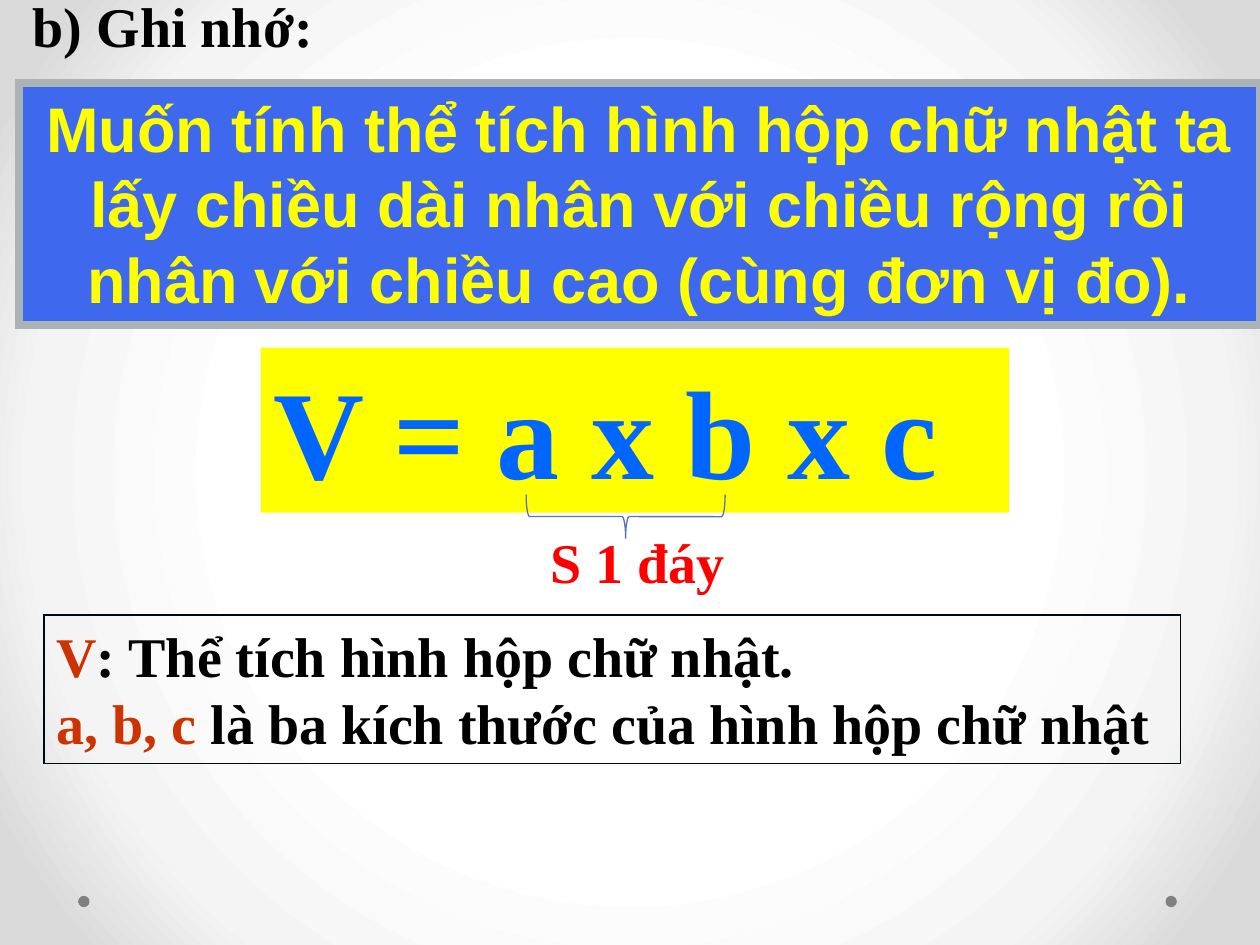
from pptx import Presentation, oxml, util as u
from pptx.dml.color import RGBColor
from pptx.enum import shapes, text
from pptx.oxml.ns import nsdecls

SERIF, SANS = "Times New Roman", "Arial"
BLACK, RED, RUST = "000000", "FF0000", "CC3300"

# Content: paragraphs are lists of (wording, colour) spans
TITLE = [[("b) Ghi nhớ:", BLACK)]]
FORMULA = [[("V = a x b x c", "0066FF")]]
RULE = [[("Muốn tính thể tích hình hộp chữ nhật ta lấy chiều dài nhân với "
          "chiều rộng rồi nhân với chiều cao (cùng đơn vị đo).", "FFFF00")]]
BASE_AREA = [[("S 1 đáy", RED)]]
LEGEND = [
    [("V", RUST), (": Thể tích hình hộp chữ nhật.", BLACK)],
    [("a, b, c", RUST), (" là ba kích thước của hình hộp chữ nhật", BLACK)],
]
GRADIENT = [(50, "FFFFFF"), (76, "F4F4F4"), (92, "DADADA")]
DOT_LEFTS = [9.25, 0.62]


def rgb(value):
    return RGBColor.from_string(value)


def place(box, left, top, width, height):
    box.left, box.top, box.width, box.height = map(u.Inches, (left, top, width, height))


def write(box, paragraphs, size, font=SERIF, align=text.PP_ALIGN.LEFT, before=0):
    frame = box.text_frame
    frame.word_wrap = True
    frame.auto_size = text.MSO_AUTO_SIZE.SHAPE_TO_FIT_TEXT
    frame.vertical_anchor = text.MSO_ANCHOR.TOP
    for index, spans in enumerate(paragraphs):
        para = frame.add_paragraph() if index else frame.paragraphs[0]
        para.alignment = align
        para.space_before = u.Pt(before)
        for wording, color in spans:
            span = para.add_run()
            span.text = wording
            span.font.name, span.font.size, span.font.bold = font, u.Pt(size), True
            span.font.color.rgb = rgb(color)


def add_shape(page, kind, at, fill=None, line=None, weight=0.75):
    shape = page.shapes.add_shape(kind, *map(u.Inches, at))
    shape.shadow.inherit = False
    if fill:
        shape.fill.solid()
        shape.fill.fore_color.rgb = rgb(fill)
    else:
        shape.fill.background()
    if line:
        shape.line.color.rgb = rgb(line)
        shape.line.width = u.Pt(weight)
        # Square corners
        shape.element.spPr.ln.append(
            oxml.parse_xml(f'<a:miter {nsdecls("a")} lim="800000"/>'))
    else:
        shape.line.fill.background()
    return shape


def set_background(page):
    stops = "".join(f'<a:gs pos="{pos * 1000}"><a:srgbClr val="{color}"/></a:gs>'
                    for pos, color in GRADIENT)
    page.background.fill.solid()
    properties = page.element.cSld.bg.bgPr
    properties.replace(properties[0], oxml.parse_xml(
        f'<a:gradFill {nsdecls("a")} rotWithShape="1"><a:gsLst>{stops}</a:gsLst>'
        '<a:path path="circle"><a:fillToRect l="50000" t="50000" r="50000" b="50000"/>'
        '</a:path></a:gradFill>'))


def main():
    deck = Presentation()
    deck.slide_width, deck.slide_height = u.Inches(10), u.Inches(7.5)
    page = deck.slides.add_slide(deck.slide_layouts[5])
    set_background(page)
    kinds = shapes.MSO_SHAPE

    # Corner dots
    for left in DOT_LEFTS:
        add_shape(page, kinds.OVAL, (left, 7.11, 0.09, 0.09), "808080")

    # Formula, legend and rule
    formula = add_shape(page, kinds.RECTANGLE, (2.07, 2.76, 5.94, 1.31), "FFFF00")
    write(formula, FORMULA, 72, before=7)
    legend = add_shape(page, kinds.RECTANGLE, (0.35, 4.88, 9.02, 1.18), line="000810")
    write(legend, LEGEND, 32)
    rule = add_shape(page, kinds.RECTANGLE, (0.15, 0.66, 9.85, 1.92), "3E68EE", "ACB3B6", 4.5)
    write(rule, RULE, 36, SANS, text.PP_ALIGN.CENTER, before=7)

    # Heading
    title = page.shapes.title
    place(title, 0.16, -0.12, 2.56, 0.64)
    write(title, TITLE, 32)

    # Brace under "a x b" with its label
    brace = add_shape(page, kinds.RIGHT_BRACE, (4.79, 3.31, 0.35, 1.58), line="5C72B2")
    brace.rotation = 90
    brace.adjustments[0] = 0.08
    label = page.shapes.add_textbox(0, 0, 0, 0)
    place(label, 4.21, 4.14, 1.7, 0.64)
    write(label, BASE_AREA, 32, align=text.PP_ALIGN.CENTER)

    deck.save("out.pptx")


if __name__ == "__main__":
    main()
